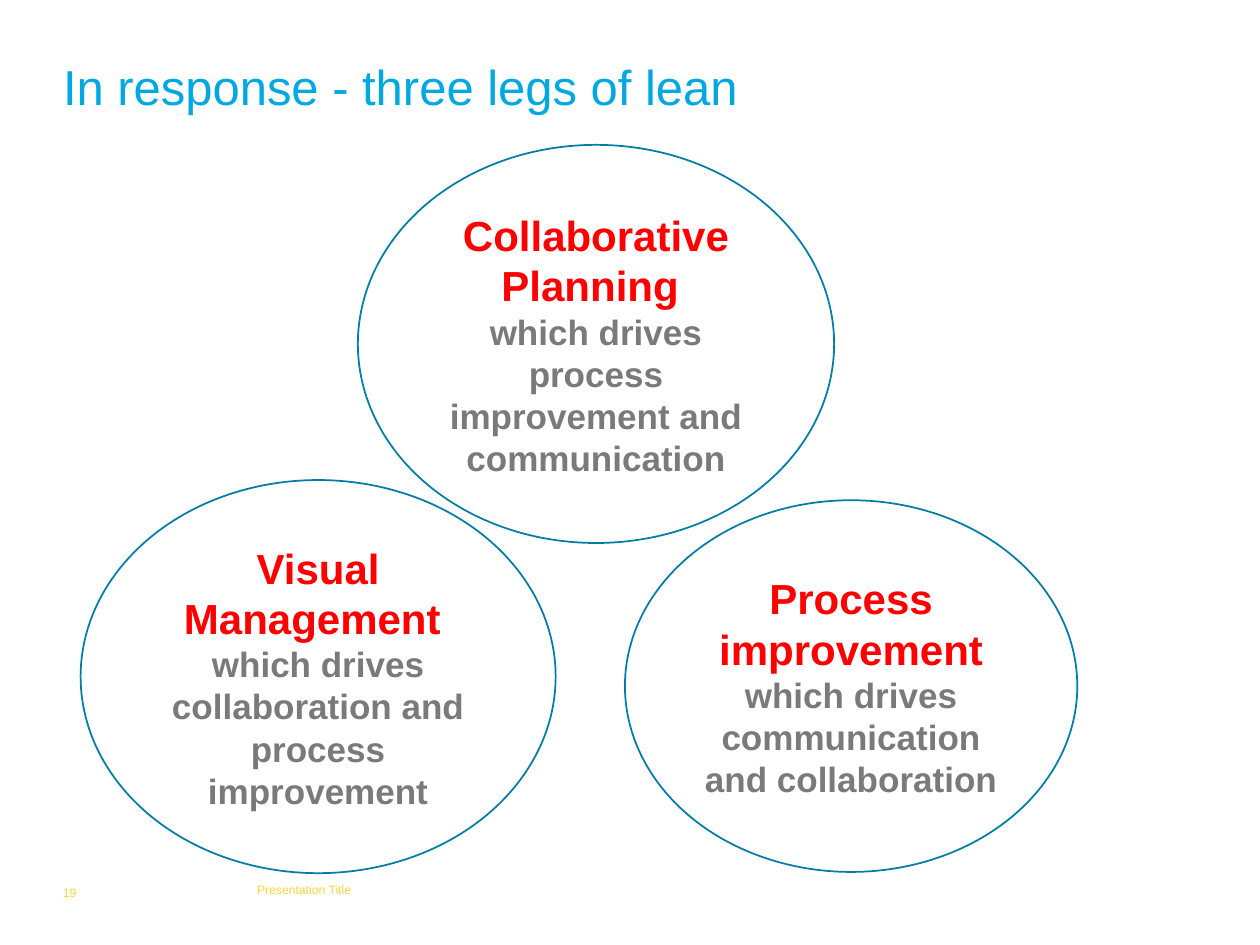
from pptx import Presentation
from pptx.dml.color import RGBColor
from pptx.enum.shapes import MSO_SHAPE
from pptx.enum.text import MSO_ANCHOR, PP_ALIGN
from pptx.util import Inches, Pt

OVAL = MSO_SHAPE.OVAL
TOP, MIDDLE = MSO_ANCHOR.TOP, MSO_ANCHOR.MIDDLE
LEFT, CENTER = PP_ALIGN.LEFT, PP_ALIGN.CENTER
TITLE_ONLY = 5

FONT = "Arial"
WHITE, BLUE, TEAL = "FFFFFF", "00A8E1", "007CA6"
RED, GRAY, YELLOW = "FF0000", "7A7A7A", "FDD443"

TITLE = "In response - three legs of lean"
# heading, effect, (left, top, width, height), from back to front
LEGS = [
    ("Process improvement", "which drives communication and collaboration",
     (4.96, 3.97, 3.59, 2.95)),
    ("Collaborative Planning ", "which drives process improvement and communication",
     (2.84, 1.15, 3.78, 3.16)),
    ("Visual Management ", "which drives collaboration and process improvement",
     (0.64, 3.81, 3.77, 3.12)),
]
# text, (left, top, width, height), wrap
FOOTERS = [
    ("19", (0.5, 7.02, 0.36, 0.12), True),
    ("Presentation Title", (2.04, 7, 0.76, 0.12), False),
]


def color(hex_code):
    return RGBColor.from_string(hex_code)


def box(values):
    return [Inches(value) for value in values]


def style(paragraph, text, size, hex_code, bold=False, alignment=LEFT):
    paragraph.text = text
    paragraph.alignment = alignment
    font = paragraph.font
    font.name, font.size, font.bold = FONT, Pt(size), bold
    font.color.rgb = color(hex_code)


def remove_margins(frame):
    frame.margin_left = frame.margin_right = 0
    frame.margin_top = frame.margin_bottom = 0


def add_title(slide):
    title = slide.shapes.title
    title.left, title.top, title.width, title.height = box((0.5, 0.5, 8.98, 0.73))
    frame = title.text_frame
    remove_margins(frame)
    frame.vertical_anchor = TOP
    style(frame.paragraphs[0], TITLE, 28, BLUE)
    frame.paragraphs[0].line_spacing = 0.9


def add_footer(slide, text, position, wrap):
    frame = slide.shapes.add_textbox(*box(position)).text_frame
    remove_margins(frame)
    frame.word_wrap = wrap
    frame.vertical_anchor = MIDDLE
    style(frame.paragraphs[0], text, 7, YELLOW)


def add_leg(slide, heading, effect, position):
    oval = slide.shapes.add_shape(OVAL, *box(position))
    oval.shadow.inherit = False
    oval.fill.solid()
    oval.fill.fore_color.rgb = color(WHITE)
    oval.line.color.rgb = color(TEAL)
    oval.line.width = Pt(1)
    frame = oval.text_frame
    frame.word_wrap = True
    frame.vertical_anchor = MIDDLE
    style(frame.paragraphs[0], heading, 24, RED, True, CENTER)
    style(frame.add_paragraph(), effect, 20, GRAY, True, CENTER)


def main():
    presentation = Presentation()
    presentation.slide_width, presentation.slide_height = box((10, 7.5))
    slide = presentation.slides.add_slide(presentation.slide_layouts[TITLE_ONLY])
    for footer in FOOTERS:
        add_footer(slide, *footer)
    add_title(slide)
    for leg in LEGS:
        add_leg(slide, *leg)
    presentation.save("out.pptx")


if __name__ == "__main__":
    main()
